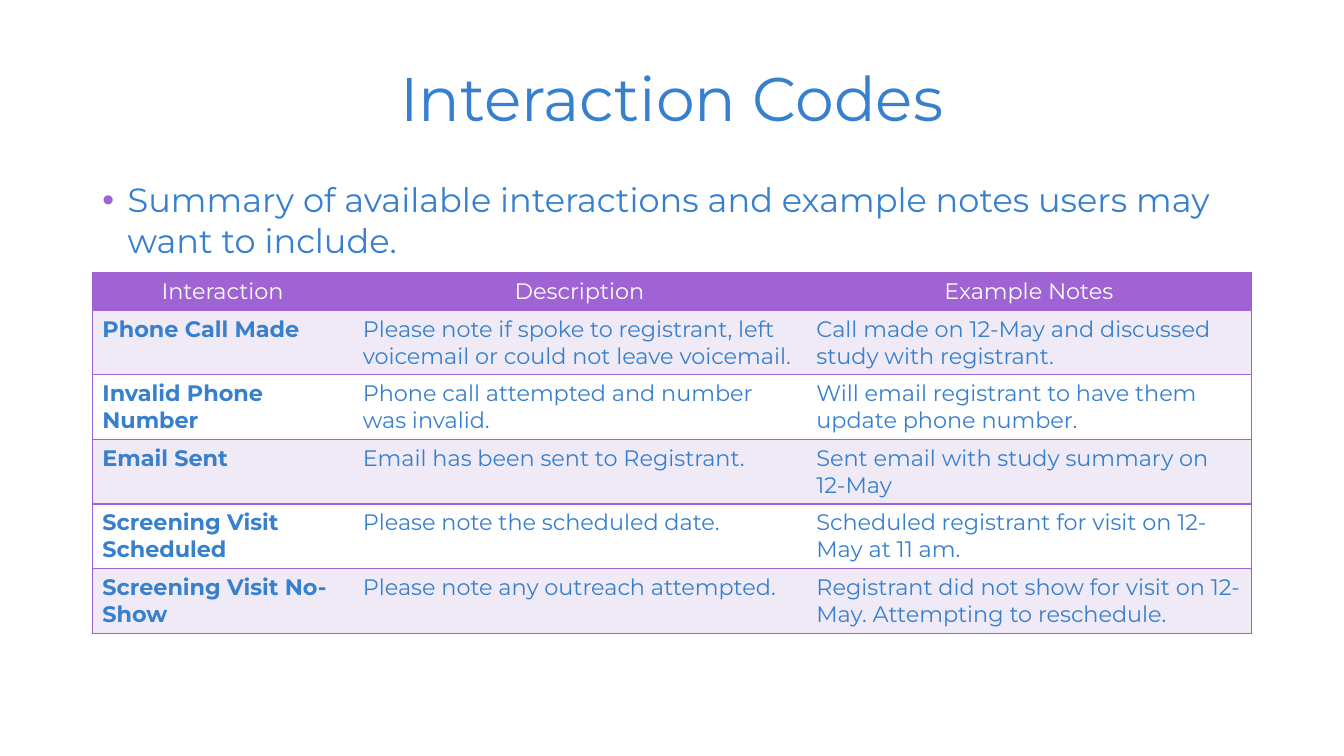
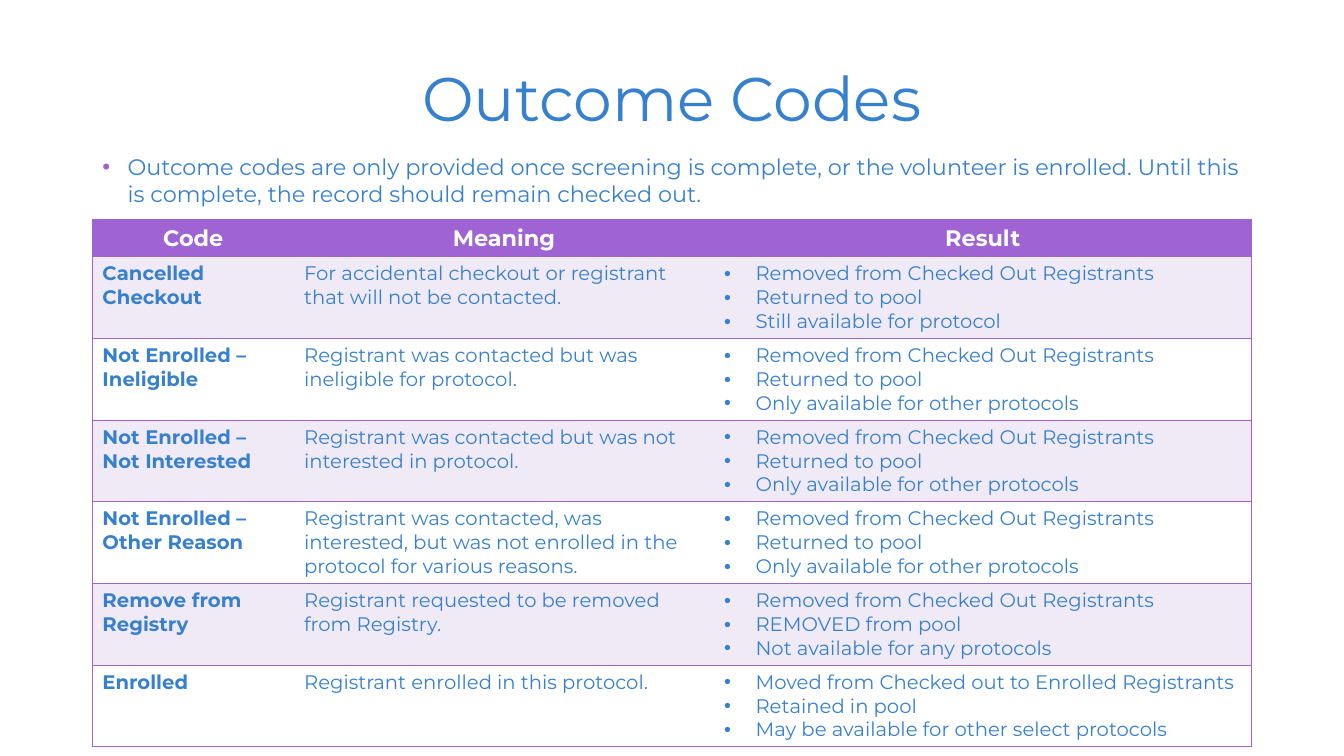
import pptx
import pptx.util
import pptx.dml.color
import pptx.enum.text
import pptx.oxml
import pptx.oxml.ns

PX = 9525
HUES = {"blue": "3780CE", "plum": "9F63D3", "pale": "F0EAF7", "white": "FFFFFF"}
FACE = "Montserrat"
LEFT, WIDE = 88, 1104
NS = pptx.oxml.ns.nsdecls("a")
MID = pptx.enum.text.PP_ALIGN.CENTER
ANCHOR = pptx.enum.text.MSO_ANCHOR


def style(para, size, hue, bold=False):
    font = para.font
    font.name = FACE
    font.size = pptx.util.Pt(size)
    font.bold = bold
    font.color.rgb = pptx.dml.color.RGBColor.from_string(HUES[hue])


def bullet(para, dent, hue):
    props = para._p.get_or_add_pPr()
    props.set("marL", str(dent * PX))
    props.set("indent", str(-dent * PX))
    for part in (
        f'<a:buClr {NS}><a:srgbClr val="{HUES[hue]}"/></a:buClr>',
        f'<a:buFont {NS} typeface="Arial"/>',
        f'<a:buChar {NS} char="•"/>',
    ):
        props.append(pptx.oxml.parse_xml(part))


OUT = "Removed from Checked Out Registrants"
OTHER = f"{OUT}\nReturned to pool\nOnly available for other protocols"

PAGES = [
    {
        "title": "Interaction Codes",
        "lead": "Summary of available interactions and example notes users may want to include.",
        "top": 166, "size": 24,
        "grid": 260, "cols": [248, 432, 424], "row": 61,
        "text": 16, "strong": False, "list": False,
        "cells": [
            ["Interaction", "Description", "Example Notes"],
            ["Phone Call Made",
             "Please note if spoke to registrant, left voicemail or could not leave voicemail.",
             "Call made on 12-May and discussed study with registrant."],
            ["Invalid Phone Number",
             "Phone call attempted and number was invalid.",
             "Will email registrant to have them update phone number."],
            ["Email Sent",
             "Email has been sent to Registrant.",
             "Sent email with study summary on 12-May"],
            ["Screening Visit Scheduled",
             "Please note the scheduled date.",
             "Scheduled registrant for visit on 12-May at 11 am."],
            ["Screening Visit No-Show",
             "Please note any outreach attempted.",
             "Registrant did not show for visit on 12-May. Attempting to reschedule."],
        ],
    },
    {
        "title": "Outcome Codes",
        "lead": "Outcome codes are only provided once screening is complete, or the volunteer "
                "is enrolled. Until this is complete, the record should remain checked out.",
        "top": 141, "size": 16,
        "grid": 209, "cols": [192, 400, 512], "row": 77,
        "text": 14, "strong": True, "list": True,
        "cells": [
            ["Code", "Meaning", "Result"],
            ["Cancelled Checkout",
             "For accidental checkout or registrant that will not be contacted.",
             f"{OUT}\nReturned to pool\nStill available for protocol"],
            ["Not Enrolled – Ineligible",
             "Registrant was contacted but was ineligible for protocol.",
             OTHER],
            ["Not Enrolled –\nNot Interested",
             "Registrant was contacted but was not interested in protocol.",
             OTHER],
            ["Not Enrolled –\nOther Reason",
             "Registrant was contacted, was interested, but was not enrolled in the "
             "protocol for various reasons.",
             OTHER],
            ["Remove from Registry",
             "Registrant requested to be removed from Registry.",
             f"{OUT}\nREMOVED from pool\nNot available for any protocols"],
            ["Enrolled",
             "Registrant enrolled in this protocol.",
             "Moved from Checked out to Enrolled Registrants\nRetained in pool\n"
             "May be available for other select protocols"],
        ],
    },
]

deck = pptx.Presentation()
deck.slide_width = 1280 * PX
deck.slide_height = 720 * PX

for page in PAGES:
    slide = deck.slides.add_slide(deck.slide_layouts[1])
    title, body = slide.placeholders
    for shape, top, high, words, side in (
        (title, 27, 139, page["title"], ANCHOR.MIDDLE),
        (body, page["top"], 460, page["lead"], ANCHOR.TOP),
    ):
        shape.left, shape.top = LEFT * PX, top * PX
        shape.width, shape.height = WIDE * PX, high * PX
        frame = shape.text_frame
        frame.text = words
        frame.word_wrap = True
        frame.auto_size = pptx.enum.text.MSO_AUTO_SIZE.NONE
        frame.vertical_anchor = side

    head = title.text_frame.paragraphs[0]
    head.alignment = MID
    head.line_spacing = 0.9
    style(head, 44, "blue")

    lead = body.text_frame.paragraphs[0]
    lead.space_before = pptx.util.Pt(10)
    lead.space_after = pptx.util.Pt(6)
    bullet(lead, 24, "plum")
    style(lead, page["size"], "blue")

    cells = page["cells"]
    count, last = len(cells), len(page["cols"]) - 1
    high = 35 + page["row"] * (count - 1)
    table = slide.shapes.add_table(
        count, last + 1, LEFT * PX, page["grid"] * PX, WIDE * PX, high * PX
    ).table
    table.horz_banding = False
    for col, wide in zip(table.columns, page["cols"]):
        col.width = wide * PX

    for r, texts in enumerate(cells):
        table.rows[r].height = (page["row"] if r else 35) * PX
        for c, words in enumerate(texts):
            cell = table.cell(r, c)
            cell.text = words
            props = cell._tc.get_or_add_tcPr()
            for edge, shown in (("L", c == 0), ("R", c == last), ("T", True), ("B", True)):
                ink = f'<a:solidFill><a:srgbClr val="{HUES["plum"]}"/></a:solidFill>'
                props.append(pptx.oxml.parse_xml(
                    f'<a:ln{edge} {NS} w="12700">{ink if shown else "<a:noFill/>"}</a:ln{edge}>'
                ))
            hue = "plum" if r == 0 else "pale" if r % 2 else "white"
            cell.fill.solid()
            cell.fill.fore_color.rgb = pptx.dml.color.RGBColor.from_string(HUES[hue])
            for para in cell.text_frame.paragraphs:
                if r == 0:
                    para.alignment = MID
                    style(para, 16, "white", page["strong"])
                    continue
                if page["list"] and c == last:
                    bullet(para, 30, "blue")
                style(para, page["text"], "blue", c == 0)

deck.save("out.pptx")
